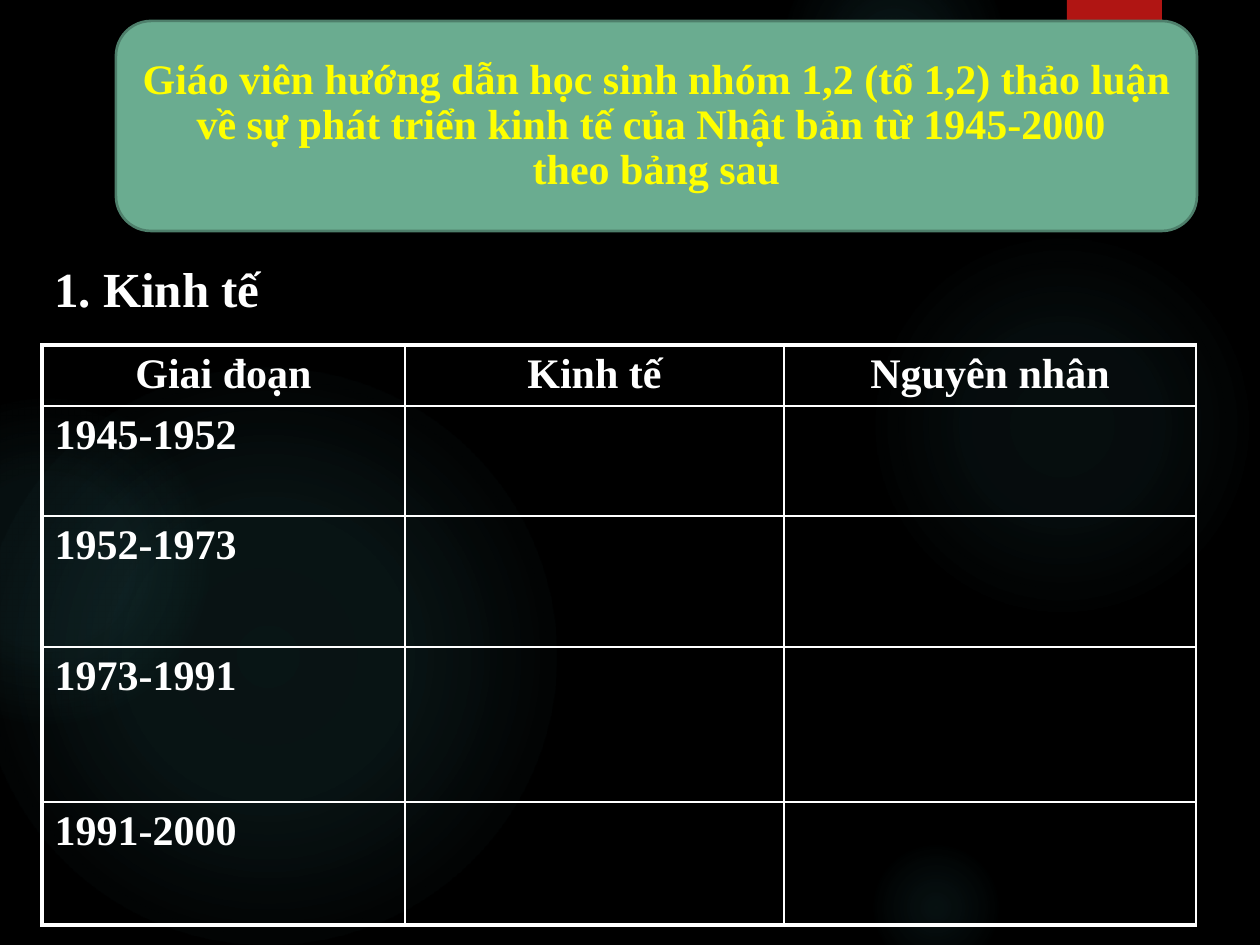
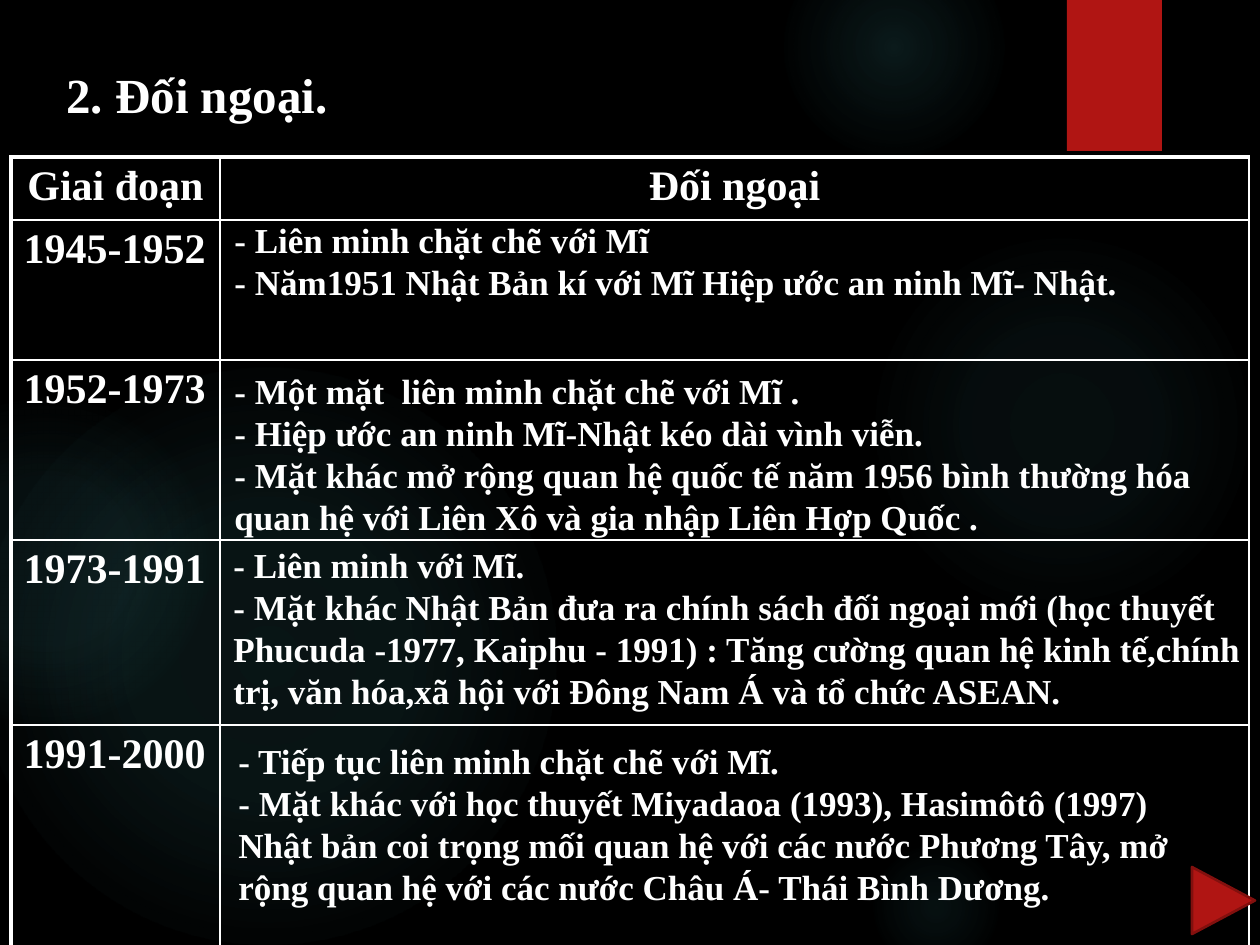
from dataclasses import dataclass

from lxml import etree
from pptx import Presentation
from pptx.dml.color import RGBColor
from pptx.enum.shapes import MSO_SHAPE
from pptx.enum.text import MSO_ANCHOR, MSO_AUTO_SIZE, PP_ALIGN
from pptx.oxml import parse_xml
from pptx.oxml.ns import qn
from pptx.util import Emu, Pt

CENTER, LEFT = PP_ALIGN.CENTER, PP_ALIGN.LEFT
ELLIPSE, RECTANGLE = MSO_SHAPE.OVAL, MSO_SHAPE.RECTANGLE
BANNER, ARROW = MSO_SHAPE.FLOWCHART_ALTERNATE_PROCESS, MSO_SHAPE.RIGHT_ARROW
DRAWING_NS = "http://schemas.openxmlformats.org/drawingml/2006/main"


@dataclass(frozen=True)
class Theme:
    font: str = "Times New Roman"
    background: str = "000000"
    text: str = "FFFFFF"
    glow: str = "50B9C1"
    accent: str = "B01513"
    accent_line: str = "82100E"
    banner: str = "6AAC90"
    banner_line: str = "4E7F6B"
    banner_text: str = "FFFF00"
    heading_size: int = 28
    table_size: int = 24
    body_size: int = 20
    thick: float = 2.25
    outline: float = 1.5
    thin: float = 1


THEME = Theme()
PX_PER_INCH = 126
SLIDE_SIZE = (1260, 945)

# Left, top, diameter, then (position %, opacity %) stops
GLOWS = [
    (868, 231, 388, [(0, 7), (36, 6), (69, 0)]),
    (784, -63, 220, [(0, 14), (36, 7), (73, 0)]),
    (868, 840, 136, [(0, 9), (36, 5), (66, 0)]),
    (-21, 368, 577, [(0, 11), (36, 10), (75, 0)]),
    (-116, 399, 325, [(0, 8), (36, 8), (72, 0)]),
]
RIBBON_BOX = (1067, 0, 95, 151)

PERIODS = ["1945-1952", "1952-1973", "1973-1991", "1991-2000"]

BANNER_BOX = (116, 21, 1081, 210)
BANNER_LINES = [
    "Giáo viên hướng dẫn học sinh nhóm 1,2 (tổ 1,2) thảo luận",
    "về sự phát triển kinh tế của Nhật bản từ 1945-2000 ",
    "theo bảng sau",
]

ECONOMY = {
    "heading": ("1. Kinh tế", (42, 252, 284, 72)),
    "header": ["Giai đoạn", "Kinh tế", "Nguyên nhân"],
    "origin": (42, 345),
    "columns": [363, 379, 412],
    "rows": [61, 110, 131, 155, 123],
}
DIPLOMACY = {
    "heading": ("2. Đối ngoại.", (54, 58, 567, 72)),
    "header": ["Giai đoạn", "Đối ngoại"],
    "origin": (11, 157),
    "columns": [209, 1029],
    "rows": [62, 140, 180, 185, 226],
}
DIPLOMACY_NOTES = [
    ((222, 212, 1038, 97), [
        "- Liên minh chặt chẽ với Mĩ",
        "- Năm1951 Nhật Bản kí với Mĩ Hiệp ước an ninh Mĩ- Nhật.",
    ]),
    ((222, 363, 1027, 183), [
        "- Một mặt  liên minh chặt chẽ với Mĩ .",
        "- Hiệp ước an ninh Mĩ-Nhật kéo dài vình viễn.",
        "- Mặt khác mở rộng quan hệ quốc tế năm 1956 bình thường hóa "
        "quan hệ với Liên Xô và gia nhập Liên Hợp Quốc .",
    ]),
    ((221, 537, 1039, 183), [
        "- Liên minh với Mĩ.",
        "- Mặt khác Nhật Bản đưa ra chính sách đối ngoại mới (học thuyết "
        "Phucuda -1977, Kaiphu - 1991) : Tăng cường quan hệ kinh tế,chính "
        "trị, văn hóa,xã hội với Đông Nam Á và tổ chức ASEAN.",
    ]),
    ((226, 733, 987, 183), [
        "- Tiếp tục liên minh chặt chẽ với Mĩ.",
        "- Mặt khác với học thuyết Miyadaoa (1993), Hasimôtô (1997) "
        "Nhật bản coi trọng mối quan hệ với các nước Phương Tây, mở "
        "rộng quan hệ với các nước Châu Á- Thái Bình Dương.",
    ]),
]
NEXT_ARROW_BOX = (1192, 867, 63, 67)


def px(length):
    return Emu(round(length * 914400 / PX_PER_INCH))


def place(box):
    return [px(length) for length in box]


def color(value):
    return RGBColor.from_string(value)


def write(text_frame, lines, size, text_color=THEME.text, align=LEFT, spacing=None):
    text_frame.text = "\n".join(lines)
    for paragraph in text_frame.paragraphs:
        paragraph.alignment = align
        paragraph.line_spacing = spacing
        for run in paragraph.runs:
            run.font.name = THEME.font
            run.font.size = Pt(size)
            run.font.bold = True
            run.font.color.rgb = color(text_color)


def add_shape(slide, kind, box, fill, line=None):
    shape = slide.shapes.add_shape(kind, *place(box))
    shape.shadow.inherit = False
    shape.fill.solid()
    shape.fill.fore_color.rgb = color(fill)
    if line:
        shape.line.color.rgb = color(line)
        shape.line.width = Pt(THEME.outline)
    else:
        shape.line.fill.background()
    return shape


def add_glow(slide, left, top, diameter, stops):
    """Add a circle whose colour fades out from its centre."""
    shape = add_shape(slide, ELLIPSE, (left, top, diameter, diameter), THEME.glow)
    stop_xml = "".join(
        f'<a:gs pos="{position * 1000}"><a:srgbClr val="{THEME.glow}">'
        f'<a:alpha val="{opacity * 1000}"/></a:srgbClr></a:gs>'
        for position, opacity in stops
    )
    gradient = parse_xml(
        f'<a:gradFill xmlns:a="{DRAWING_NS}" rotWithShape="1"><a:gsLst>{stop_xml}</a:gsLst>'
        '<a:path path="circle"><a:fillToRect l="50000" t="50000" r="50000" b="50000"/>'
        '</a:path></a:gradFill>'
    )
    properties = shape._element.spPr
    properties.replace(properties.find(qn("a:solidFill")), gradient)


def add_text(slide, box, lines, size):
    text_frame = slide.shapes.add_textbox(*place(box)).text_frame
    text_frame.word_wrap = True
    text_frame.auto_size = MSO_AUTO_SIZE.SHAPE_TO_FIT_TEXT
    write(text_frame, lines, size)


def set_borders(cell, widths):
    """Draw the cell's edges; widths maps L, R, T, B to points."""
    properties = cell._tc.get_or_add_tcPr()
    for side, width in widths.items():
        line = etree.SubElement(properties, qn(f"a:ln{side}"), w=str(Pt(width)))
        fill = etree.SubElement(line, qn("a:solidFill"))
        etree.SubElement(fill, qn("a:srgbClr"), val=THEME.text)


def add_period_table(slide, header, origin, columns, rows):
    size = (sum(columns), sum(rows))
    table = slide.shapes.add_table(len(rows), len(columns), *place(origin + size)).table
    table.first_row = table.horz_banding = False
    for column, width in zip(table.columns, columns):
        column.width = px(width)
    for row, height in zip(table.rows, rows):
        row.height = px(height)
    last_row = len(rows) - 1
    for row_index in range(len(rows)):
        for column_index, title in enumerate(header):
            cell = table.cell(row_index, column_index)
            set_borders(cell, {
                "L": THEME.thin if column_index else THEME.thick,
                "R": THEME.thin,
                "T": THEME.thin if row_index else THEME.thick,
                "B": THEME.thick if row_index == last_row else THEME.thin,
            })
            cell.fill.background()
            if row_index == 0:
                write(cell.text_frame, [title], THEME.table_size, align=CENTER)
            elif column_index == 0:
                write(cell.text_frame, [PERIODS[row_index - 1]], THEME.table_size)


def add_section_slide(presentation, heading, **table):
    """Add a slide with the shared backdrop, a period table and its heading."""
    slide = presentation.slides.add_slide(presentation.slide_layouts[6])
    slide.background.fill.solid()
    slide.background.fill.fore_color.rgb = color(THEME.background)
    for glow in GLOWS:
        add_glow(slide, *glow)
    add_shape(slide, RECTANGLE, RIBBON_BOX, THEME.accent)
    add_period_table(slide, **table)
    title, box = heading
    add_text(slide, box, [title], THEME.heading_size)
    return slide


def add_banner(slide):
    banner = add_shape(slide, BANNER, BANNER_BOX, THEME.banner, THEME.banner_line)
    banner.text_frame.word_wrap = False
    banner.text_frame.vertical_anchor = MSO_ANCHOR.MIDDLE
    write(banner.text_frame, BANNER_LINES, THEME.table_size, THEME.banner_text, CENTER, 0.9)


def main():
    presentation = Presentation()
    presentation.slide_width, presentation.slide_height = place(SLIDE_SIZE)

    economy = add_section_slide(presentation, **ECONOMY)
    add_banner(economy)

    diplomacy = add_section_slide(presentation, **DIPLOMACY)
    for box, lines in DIPLOMACY_NOTES:
        add_text(diplomacy, box, lines, THEME.body_size)
    arrow = add_shape(diplomacy, ARROW, NEXT_ARROW_BOX, THEME.accent, THEME.accent_line)
    arrow.adjustments[1] = 1

    presentation.save("out.pptx")


if __name__ == "__main__":
    main()
